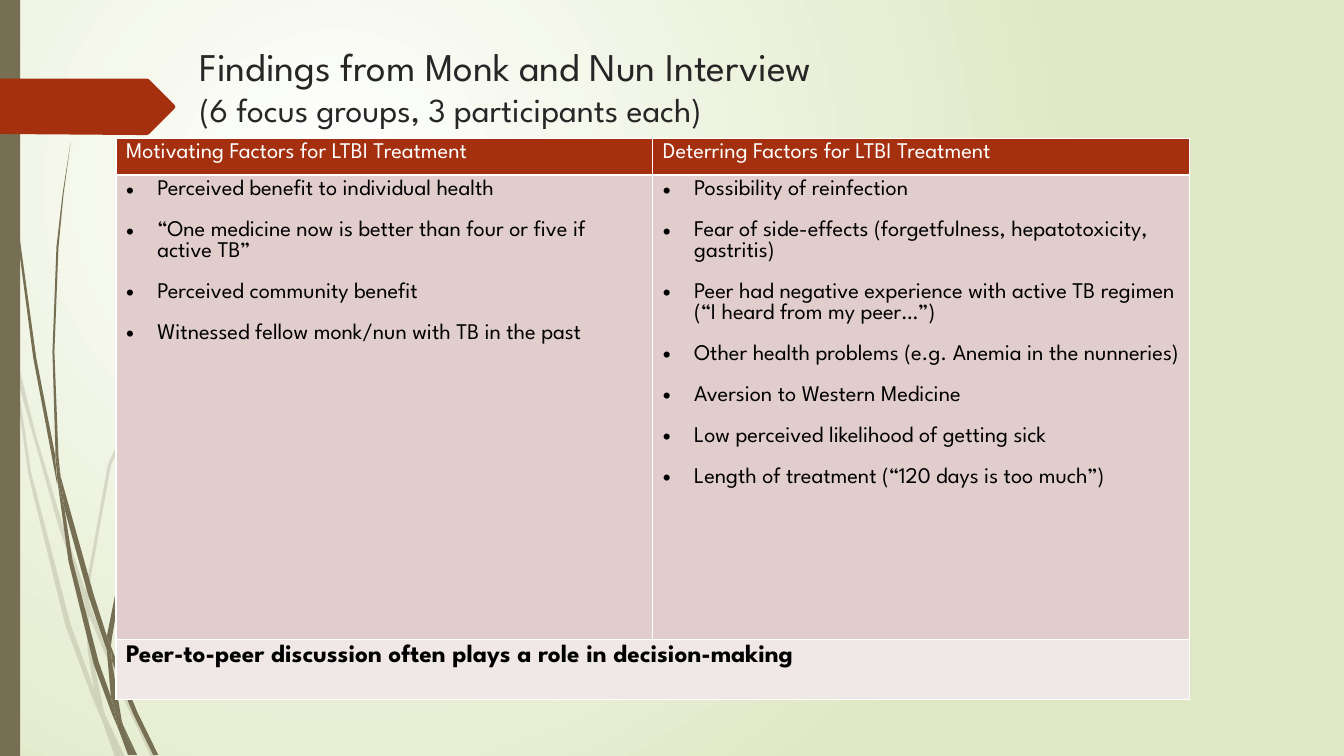
import pptx
import pptx.dml.color
import pptx.enum.shapes
import pptx.enum.text
import pptx.oxml
import pptx.oxml.ns
import pptx.util
from lxml import etree

RGBColor = pptx.dml.color.RGBColor
Inches = pptx.util.Inches
Pt = pptx.util.Pt
qn = pptx.oxml.ns.qn

OLIVE = RGBColor(0x76, 0x6F, 0x54)
RUST = RGBColor(0xA5, 0x30, 0x10)
PALE_GREEN = RGBColor(0xDF, 0xE8, 0xC4)
ROSE = RGBColor(0xE1, 0xCD, 0xCC)
LIGHT_ROSE = RGBColor(0xF0, 0xE8, 0xE7)
CHARCOAL = RGBColor(0x26, 0x26, 0x26)
WHITE = RGBColor(0xFF, 0xFF, 0xFF)
BLACK = RGBColor(0, 0, 0)

FONT = "League Spartan"
SLIDE_W, SLIDE_H = 13.33, 7.5
HUNDREDTH = Inches(0.01)

FAINT_GRASS = [
    [(11, 350), (9, 322), (0, 282), (0, 299), (10, 344)],
    [(58, 522), (84, 599), (85, 586), (62, 520), (36, 433), (14, 345), (17, 376)],
    [(92, 607), (88, 596), (88, 610), (123, 694), (150, 751), (155, 751), (127, 692)],
    [(119, 751), (124, 751), (105, 711)],
    [(93, 683), (70, 619), (31, 469), (17, 376), (11, 350), (28, 470), (65, 621),
     (92, 693), (101, 714), (99, 707)],
    [(84, 599), (87, 646), (93, 683), (96, 692), (105, 711), (103, 706), (91, 646),
     (88, 610), (88, 608)],
    [(88, 584), (110, 462), (160, 349), (229, 245), (268, 198), (290, 175), (312, 154),
     (312, 153), (289, 175), (268, 197), (228, 244), (158, 348), (107, 461), (85, 584),
     (85, 586), (88, 596)],
    [(101, 714), (114, 751), (119, 751)],
    [(88, 608), (88, 610), (88, 596), (85, 586), (84, 599)],
    [(96, 692), (93, 683), (99, 707), (101, 714), (119, 751), (105, 711)],
]
DARK_GRASS = [
    [(7, 110), (17, 233), (33, 355), (56, 477), (57, 481), (55, 457), (55, 453),
     (36, 355), (19, 232), (8, 109), (5, 48), (4, 0), (3, 0), (4, 48)],
    [(88, 592), (106, 645), (106, 633), (106, 631), (93, 590), (60, 472), (64, 505)],
    [(113, 649), (110, 641), (111, 656), (132, 708), (152, 749), (157, 749), (136, 706)],
    [(110, 691), (98, 657), (72, 556), (64, 505), (57, 477), (68, 557), (93, 659),
     (111, 708), (117, 722), (116, 717)],
    [(60, 472), (58, 453), (54, 349), (58, 245), (63, 193), (70, 141), (62, 193),
     (56, 245), (52, 349), (55, 449)],
    [(133, 749), (136, 749), (122, 719)],
    [(57, 477), (64, 505), (60, 472), (55, 449), (55, 453)],
    [(111, 633), (125, 552), (158, 476), (205, 406), (231, 374), (245, 359), (261, 344),
     (260, 344), (245, 358), (231, 373), (204, 405), (156, 474), (122, 551), (106, 631),
     (110, 641)],
    [(117, 722), (127, 749), (131, 749)],
    [(106, 645), (110, 691), (116, 706), (122, 719), (121, 716), (111, 656), (109, 651)],
    [(106, 645), (109, 651), (111, 656), (110, 641), (106, 631), (106, 633)],
    [(116, 706), (110, 691), (116, 717), (117, 722), (130, 749), (133, 749), (122, 719)],
]
ARROW = [(173, 108), (148, 133), (146, 134), (136, 134), (0, 133), (0, 78), (136, 78),
         (146, 78), (148, 79), (173, 104), (174, 106)]

MOTIVATING = [
    "Perceived benefit to individual health",
    "“One medicine now is better than four or five if active TB”",
    "Perceived community benefit",
    "Witnessed fellow monk/nun with TB in the past",
]
DETERRING = [
    "Possibility of reinfection",
    "Fear of side-effects (forgetfulness, hepatotoxicity, gastritis)",
    "Peer had negative experience with active TB regimen (“I heard from my peer…”)",
    "Other health problems (e.g. Anemia in the nunneries)",
    "Aversion to Western Medicine",
    "Low perceived likelihood of getting sick",
    "Length of treatment (“120 days is too much”)",
]


def paint(sp, color, alpha=None):
    sp.shadow.inherit = False
    sp.fill.solid()
    sp.fill.fore_color.rgb = color
    sp.line.fill.background()
    if alpha is not None:
        clr = sp.fill._xPr.find(".//" + qn("a:srgbClr"))
        etree.SubElement(clr, qn("a:alpha")).set("val", str(alpha * 1000))


def add_outline(shapes, points, box, color, alpha=None):
    builder = shapes.build_freeform(*points[0], scale=HUNDREDTH)
    builder.add_line_segments(points[1:], close=True)
    paint(builder.convert_to_shape(Inches(box[0]), Inches(box[1])), color, alpha)


def add_run(p, text, **formats):
    r = p.add_run()
    r.text = text
    color = formats.pop("color")
    for name, value in {"name": FONT, **formats}.items():
        setattr(r.font, name, value)
    r.font.color.rgb = color


def set_background(s):
    fill = s.background.fill
    fill.gradient()
    for stop, color in zip(fill.gradient_stops, (WHITE, PALE_GREEN)):
        stop.color.rgb = color
    fill.gradient_stops[0].position = 0
    fill.gradient_stops[1].position = 1
    lin = s.background._cSld.find(".//" + qn("a:lin"))
    path = etree.Element(qn("a:path"), {"path": "circle"})
    etree.SubElement(path, qn("a:fillToRect"),
                     {"l": "50000", "t": "50000", "r": "100000", "b": "100000"})
    lin.getparent().replace(lin, path)


def add_side_decor(s, box):
    x, y, w, h = box
    for blades, alpha in ((FAINT_GRASS, 20), (DARK_GRASS, None)):
        group = s.shapes.add_group_shape()
        for points in blades:
            add_outline(group.shapes, points, box, OLIVE, alpha)
    bar = s.shapes.add_shape(pptx.enum.shapes.MSO_SHAPE.RECTANGLE,
                             Inches(x), Inches(y), Inches(w * 0.015), Inches(h))
    paint(bar, OLIVE)
    add_outline(s.shapes, ARROW, box, RUST)


def add_title(s, box):
    tf = s.shapes.add_textbox(*map(Inches, box)).text_frame
    for name, value in {"word_wrap": True, "margin_top": Inches(0.14),
                        "vertical_anchor": pptx.enum.text.MSO_ANCHOR.TOP}.items():
        setattr(tf, name, value)
    p = tf.paragraphs[0]
    p.line_spacing = Pt(28)
    add_run(p, "Findings from Monk and Nun Interview", size=Pt(28), color=CHARCOAL)
    p.add_line_break()
    add_run(p, "(6 focus groups, 3 participants each)", size=Pt(24), color=CHARCOAL)


def fill_cell(cell, lines, fill, bullets=False, **formats):
    cell.fill.solid()
    cell.fill.fore_color.rgb = fill
    tcPr = cell._tc.get_or_add_tcPr()
    for i, side in enumerate(("lnL", "lnR", "lnT", "lnB")):
        ln = etree.Element(qn("a:" + side), {"w": str(Pt(1))})
        solid = etree.SubElement(ln, qn("a:solidFill"))
        etree.SubElement(solid, qn("a:srgbClr"), {"val": str(WHITE)})
        tcPr.insert(i, ln)
    tf = cell.text_frame
    for i, text in enumerate(lines):
        p = tf.add_paragraph() if i else tf.paragraphs[0]
        if bullets:
            p.space_after = Pt(14.7)
            pPr = p._p.get_or_add_pPr()
            pPr.set("marL", str(Inches(0.31)))
            pPr.set("indent", str(-Inches(0.31)))
            etree.SubElement(pPr, qn("a:buFont"), {"typeface": "Arial"})
            etree.SubElement(pPr, qn("a:buChar"), {"char": "•"})
        add_run(p, text, **formats)


def add_factor_table(s, box):
    x, y, w, h = box
    row_heights = (0.34, 4.61, h - 4.95)
    table = s.shapes.add_table(3, 2, *map(Inches, box)).table
    for row, height in zip(table.rows, row_heights):
        row.height = Inches(height)
    columns = (("Motivating Factors for LTBI Treatment", MOTIVATING),
               ("Deterring Factors for LTBI Treatment", DETERRING))
    for c, (heading, factors) in enumerate(columns):
        table.columns[c].width = Inches(w / 2)
        fill_cell(table.cell(0, c), [heading], RUST, size=Pt(16), bold=False, color=WHITE)
        fill_cell(table.cell(1, c), factors, ROSE, bullets=True, size=Pt(16), color=BLACK)
    table.cell(2, 0).merge(table.cell(2, 1))
    fill_cell(table.cell(2, 0),
              ["Peer-to-peer discussion often plays a role in decision-making"],
              LIGHT_ROSE, size=Pt(18), bold=True, color=BLACK)


def main():
    prs = pptx.Presentation()
    prs.slide_width, prs.slide_height = Inches(SLIDE_W), Inches(SLIDE_H)
    s = prs.slides.add_slide(prs.slide_layouts[6])
    set_background(s)
    add_side_decor(s, (0, 0, SLIDE_W, SLIDE_H))
    add_title(s, (1.88, 0.36, 10.53, 1.4))
    add_factor_table(s, (1.15, 1.37, 10.65, 5.54))
    prs.save("out.pptx")


if __name__ == "__main__":
    main()
